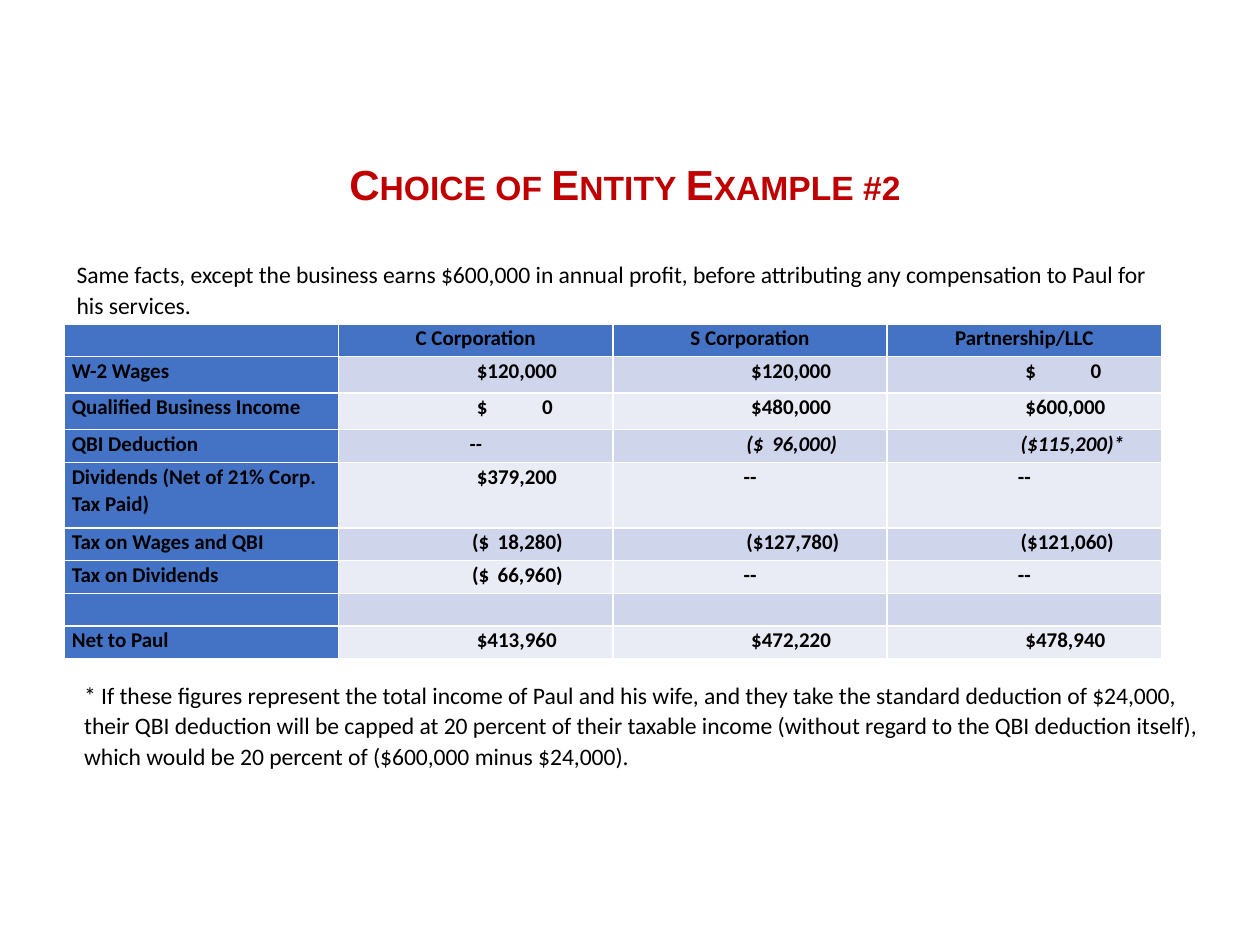
"""Build the entity choice slide with its tax table."""
from dataclasses import dataclass

from lxml.etree import SubElement
from pptx import Presentation
from pptx.dml.color import RGBColor
from pptx.enum.text import MSO_ANCHOR, PP_ALIGN
from pptx.oxml.ns import qn
from pptx.util import Pt

SCALE = 9144


@dataclass(frozen=True)
class Theme:
    ink: str = "000000"
    red: str = "C00000"
    blue: str = "4472C4"
    bands: tuple = ("CFD5EA", "E9EBF5")
    line: str = "FFFFFF"
    head: str = "Arial"
    body: str = "Calibri"
    big: float = 24
    note: float = 13.5
    cell: int = 12


def px(num):
    return num * SCALE


def put(item, values):
    for key, val in values.items():
        setattr(item, key, val)


class Deck:
    def __init__(self, theme):
        self.theme = theme
        self.show = Presentation()
        put(self.show, {"slide_width": px(1000), "slide_height": px(750)})
        self.slide = self.show.slides.add_slide(self.show.slide_layouts[6])

    def words(self, para, text, font, color, form):
        run = para.add_run()
        run.text = text
        put(run.font, font)
        run.font.color.rgb = RGBColor.from_string(color)
        put(para, form)
        return run

    def text(self, box, text, font, color, form, anchor=MSO_ANCHOR.TOP):
        frame = self.slide.shapes.add_textbox(*map(px, box)).text_frame
        put(frame, {"word_wrap": True, "vertical_anchor": anchor})
        return self.words(frame.paragraphs[0], text, font, color, form)

    def title(self, box, text):
        look = self.theme
        font = {"name": look.head, "size": Pt(look.big), "bold": True}
        form = {"alignment": PP_ALIGN.CENTER, "line_spacing": 0.9}
        run = self.text(box, text, font, look.red, form, MSO_ANCHOR.MIDDLE)
        run._r.get_or_add_rPr().set("cap", "small")

    def note(self, box, text):
        look = self.theme
        font = {"name": look.body, "size": Pt(look.note)}
        form = {"line_spacing": 1.07, "space_after": Pt(6)}
        self.text(box, text, font, look.ink, form)

    def tabs(self, para, stops):
        group = SubElement(para._p.get_or_add_pPr(), qn("a:tabLst"))
        for side, pos in stops:
            SubElement(group, qn("a:tab"), pos=str(px(pos)), algn=side)

    def edge(self, cell):
        props = cell._tc.get_or_add_tcPr()
        for side in "LRTB":
            line = SubElement(props, qn(f"a:ln{side}"), w=str(Pt(1)))
            fill = SubElement(line, qn("a:solidFill"))
            SubElement(fill, qn("a:srgbClr"), val=self.theme.line)

    def cell(self, cell, text, fill, center, slant):
        look = self.theme
        put(cell, {"margin_left": px(6), "margin_right": px(6),
                   "margin_top": 0, "margin_bottom": 0})
        self.edge(cell)
        cell.fill.solid()
        cell.fill.fore_color.rgb = RGBColor.from_string(fill)
        para = cell.text_frame.paragraphs[0]
        if not text:
            last = SubElement(para._p, qn("a:endParaRPr"))
            last.set("sz", str(look.cell * 100))
            return
        font = {"name": look.body, "size": Pt(look.cell),
                "bold": True, "italic": slant}
        side = PP_ALIGN.CENTER if center else PP_ALIGN.LEFT
        self.words(para, text, font, look.ink,
                   {"alignment": side, "line_spacing": 1.07})
        if "\t" in text:
            end = 172 if "(" in text else 164
            self.tabs(para, [("l", 100), ("r", end)])

    def table(self, box, rows, highs, slants):
        look = self.theme
        grid = self.slide.shapes.add_table(
            len(rows), len(rows[0]), *map(px, box)).table
        for row, high in zip(grid.rows, highs):
            row.height = px(high)
        for r, row in enumerate(rows):
            for c, text in enumerate(row):
                lead = r == 0 or c == 0
                fill = look.blue if lead else look.bands[(r - 1) % 2]
                self.cell(grid.cell(r, c), text, fill,
                          r == 0 or text == "--", r in slants and c > 0)

    def save(self):
        self.show.save("out.pptx")


ROWS = [
    ("", "C Corporation", "S Corporation", "Partnership/LLC"),
    ("W-2 Wages", "\t $120,000", "\t $120,000", "\t $\t0"),
    ("Qualified Business Income", "\t $\t0", "\t $480,000", "\t $600,000"),
    ("QBI Deduction", "--", "\t($\t96,000)", "\t($115,200)*"),
    ("Dividends (Net of 21% Corp. Tax Paid)", "\t $379,200", "--", "--"),
    ("Tax on Wages and QBI", "\t($\t18,280)", "\t($127,780)",
     "\t($121,060)"),
    ("Tax on Dividends", "\t($\t66,960)", "--", "--"),
    ("", "", "", ""),
    ("Net to Paul", "\t $413,960", "\t $472,220", "\t $478,940"),
]


def main():
    deck = Deck(Theme())
    deck.title((65, 94, 862, 109), "Choice of Entity Example #2")
    deck.note((51, 200, 876, 59),
              "Same facts, except the business earns $600,000 in annual "
              "profit, before attributing any compensation to Paul for his "
              "services.")
    deck.table((51, 257, 871, 267), ROWS,
               [26, 29, 29, 26, 52] + [26] * 4, {3})
    deck.note((57, 534, 906, 83),
              "* If these figures represent the total income of Paul and his "
              "wife, and they take the standard deduction of $24,000, their "
              "QBI deduction will be capped at 20 percent of their taxable "
              "income (without regard to the QBI deduction itself), which "
              "would be 20 percent of ($600,000 minus $24,000).")
    deck.save()


if __name__ == "__main__":
    main()
